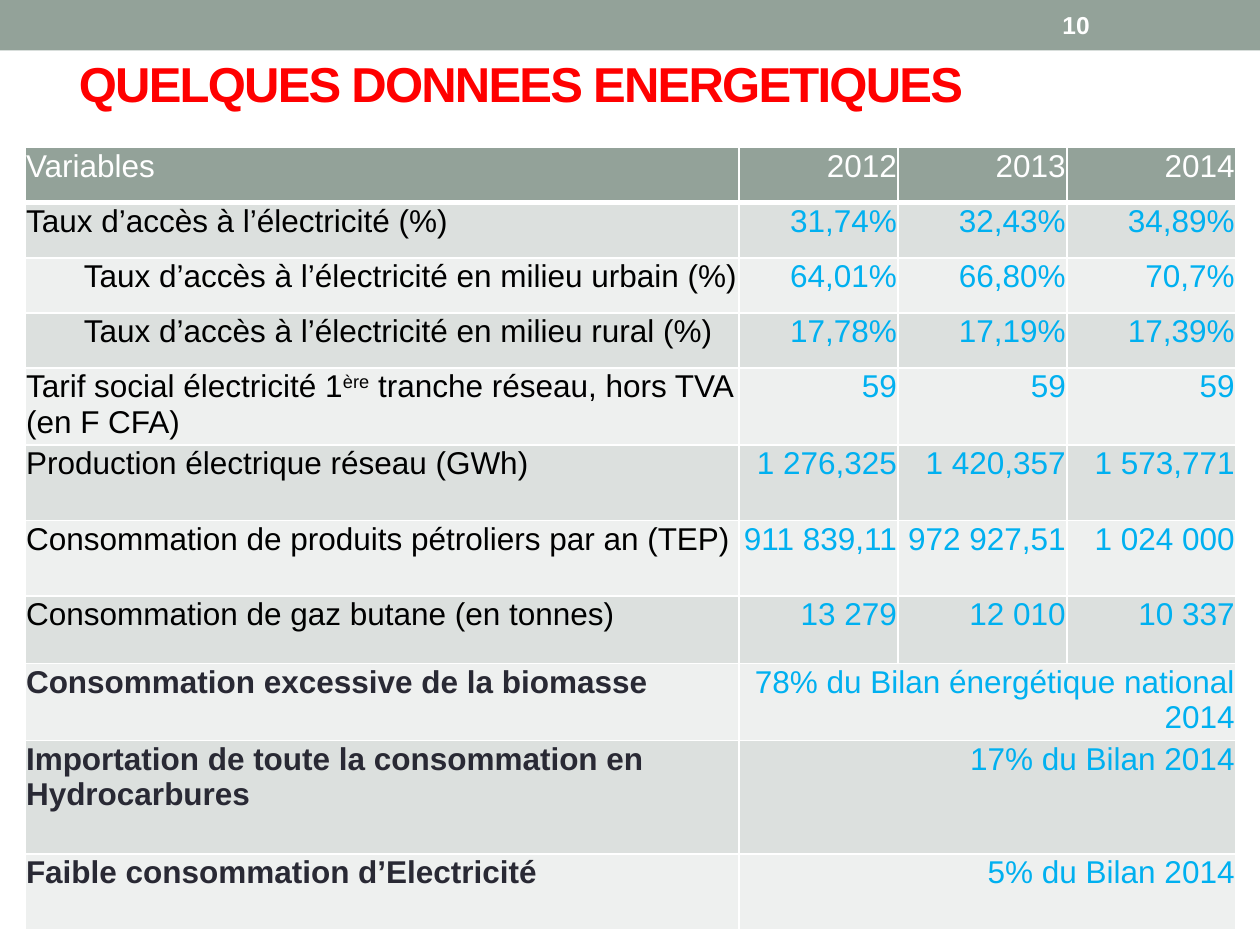
from lxml.etree import SubElement
from pptx import Presentation
from pptx.dml.color import RGBColor
from pptx.enum.shapes import MSO_SHAPE
from pptx.enum.text import MSO_ANCHOR, PP_ALIGN
from pptx.oxml.ns import qn
from pptx.util import Pt

SAGE, WHITE, BLACK, INK = "93A299", "FFFFFF", "000000", "292934"
RED, BLUE = "FF0000", "00B0F0"
BANDS = ["DCE0DE", "EEF0EF"]
COLUMN_WIDTHS = [408, 91, 96.5, 96.5]
ROW_HEIGHTS = [31.5] * 4 + [43.2] * 3 + [38.6, 43.2, 64.8, 43.2]
INDENT = 33.8

HEADINGS = ["Variables", "2012", "2013", "2014"]
YEARLY_ROWS = [
    ("Taux d’accès à l’électricité (%)", "31,74%", "32,43%", "34,89%"),
    ("Taux d’accès à l’électricité en milieu urbain (%)", "64,01%", "66,80%", "70,7%"),
    ("Taux d’accès à l’électricité en milieu rural (%)", "17,78%", "17,19%", "17,39%"),
    (["Tarif social électricité 1", "ère", " tranche réseau, hors TVA (en F CFA)"], "59", "59", "59"),
    ("Production électrique réseau (GWh)", "1 276,325", "1 420,357", "1 573,771"),
    ("Consommation de produits pétroliers par an (TEP)", "911 839,11", "972 927,51", "1 024 000"),
    ("Consommation de gaz butane (en tonnes)", "13 279", "12 010", "10 337"),
]
SUMMARY_ROWS = [
    ("Consommation excessive de la biomasse", "78% du Bilan énergétique national 2014"),
    ("Importation de toute la consommation en Hydrocarbures", "17% du Bilan 2014"),
    ("Faible consommation d’Electricité", "5% du Bilan 2014"),
]
INDENTED = [YEARLY_ROWS[1][0], YEARLY_ROWS[2][0]]


def color(value):
    return RGBColor.from_string(value)


def write(frame, text, size=18, fill=BLACK, bold=False, align=PP_ALIGN.LEFT, spacing=None):
    frame.word_wrap = True
    paragraph = frame.paragraphs[0]
    paragraph.alignment = align
    parts = [text] if isinstance(text, str) else text
    for index, part in enumerate(parts):
        run = paragraph.add_run()
        run.text = part
        run.font.name = "Arial"
        run.font.size = Pt(size)
        run.font.bold = bold
        run.font.color.rgb = color(fill)
        properties = run._r.get_or_add_rPr()
        if index % 2:
            properties.set("baseline", "30000")
        if spacing is not None:
            properties.set("spc", str(spacing * 100))


def add_text(slide, left, top, width, height, text, **style):
    frame = slide.shapes.add_textbox(Pt(left), Pt(top), Pt(width), Pt(height)).text_frame
    frame.vertical_anchor = MSO_ANCHOR.MIDDLE
    write(frame, text, **style)


def set_borders(cell, bottom_width):
    properties = cell._tc.get_or_add_tcPr()
    for side, width in [("lnL", 1), ("lnR", 1), ("lnT", 1), ("lnB", bottom_width)]:
        line = SubElement(properties, qn(f"a:{side}"), w=str(Pt(width)))
        SubElement(SubElement(line, qn("a:solidFill")), qn("a:srgbClr"), val=WHITE)


def fill_cell(cell, text, background, left_margin=0.7, bottom_width=1, **style):
    cell.margin_left = Pt(left_margin)
    cell.margin_top = cell.margin_right = Pt(0.7)
    cell.margin_bottom = 0
    set_borders(cell, bottom_width)
    cell.fill.solid()
    cell.fill.fore_color.rgb = color(background)
    write(cell.text_frame, text, **style)


def add_header(slide, left, top, width, height):
    band = slide.shapes.add_shape(MSO_SHAPE.RECTANGLE, Pt(left), Pt(top), Pt(width), Pt(height))
    band.shadow.inherit = False
    band.fill.solid()
    band.fill.fore_color.rgb = color(SAGE)
    band.line.fill.background()
    add_text(slide, left + 600, top + 1.4, 84, height - 2.8, "10", size=14, fill=WHITE, bold=True)


def add_energy_table(slide, left, top, width, height):
    rows = [HEADINGS, *YEARLY_ROWS, *SUMMARY_ROWS]
    table = slide.shapes.add_table(
        len(rows), len(HEADINGS), Pt(left), Pt(top), Pt(width), Pt(height)
    ).table
    table.horz_banding = False
    for column, column_width in zip(table.columns, COLUMN_WIDTHS):
        column.width = Pt(column_width)
    for row, row_height in zip(table.rows, ROW_HEIGHTS):
        row.height = Pt(row_height)

    for row_index, values in enumerate(rows):
        is_heading = row_index == 0
        is_summary = len(values) == 2
        background = SAGE if is_heading else BANDS[(row_index - 1) % 2]
        if is_summary:
            table.cell(row_index, 1).merge(table.cell(row_index, 3))
        for column_index, text in enumerate(values):
            is_label = column_index == 0
            label_color = INK if is_summary else BLACK
            fill_cell(
                table.cell(row_index, column_index), text, background,
                left_margin=INDENT if text in INDENTED else 0.7,
                bottom_width=3 if is_heading else 1,
                fill=WHITE if is_heading else label_color if is_label else BLUE,
                bold=is_label and is_summary,
                align=PP_ALIGN.LEFT if is_label else PP_ALIGN.RIGHT,
            )


def main():
    presentation = Presentation()
    presentation.slide_width, presentation.slide_height = Pt(720), Pt(540)
    slide = presentation.slides.add_slide(presentation.slide_layouts[6])
    add_header(slide, 0, 0, 720, 28.8)
    add_text(slide, 38, 0, 648, 94.5, "QUELQUES DONNEES ENERGETIQUES",
             size=28, fill=RED, bold=True, spacing=-1)
    add_energy_table(slide, 14.2, 84.4, sum(COLUMN_WIDTHS), sum(ROW_HEIGHTS))
    presentation.save("out.pptx")


if __name__ == "__main__":
    main()
